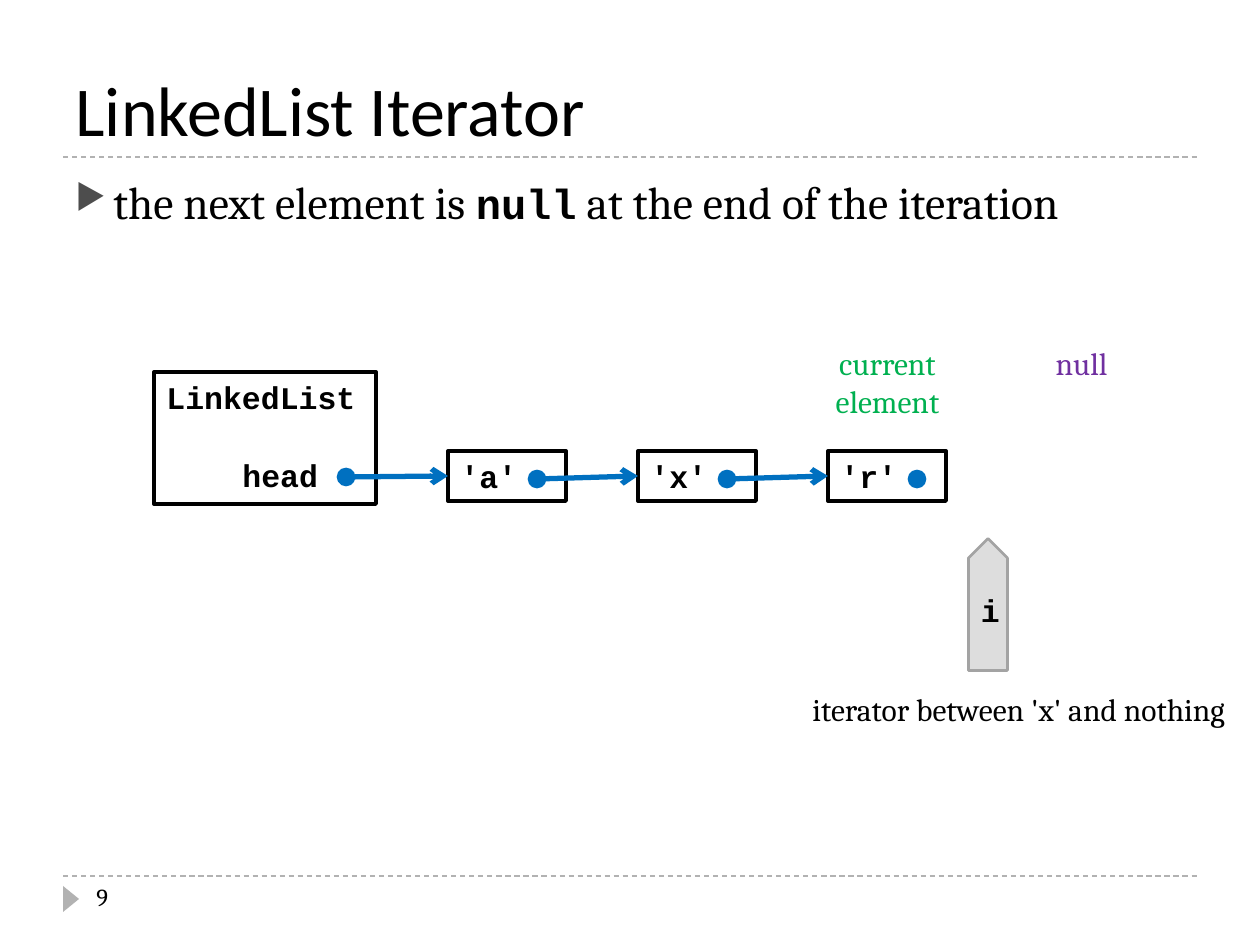
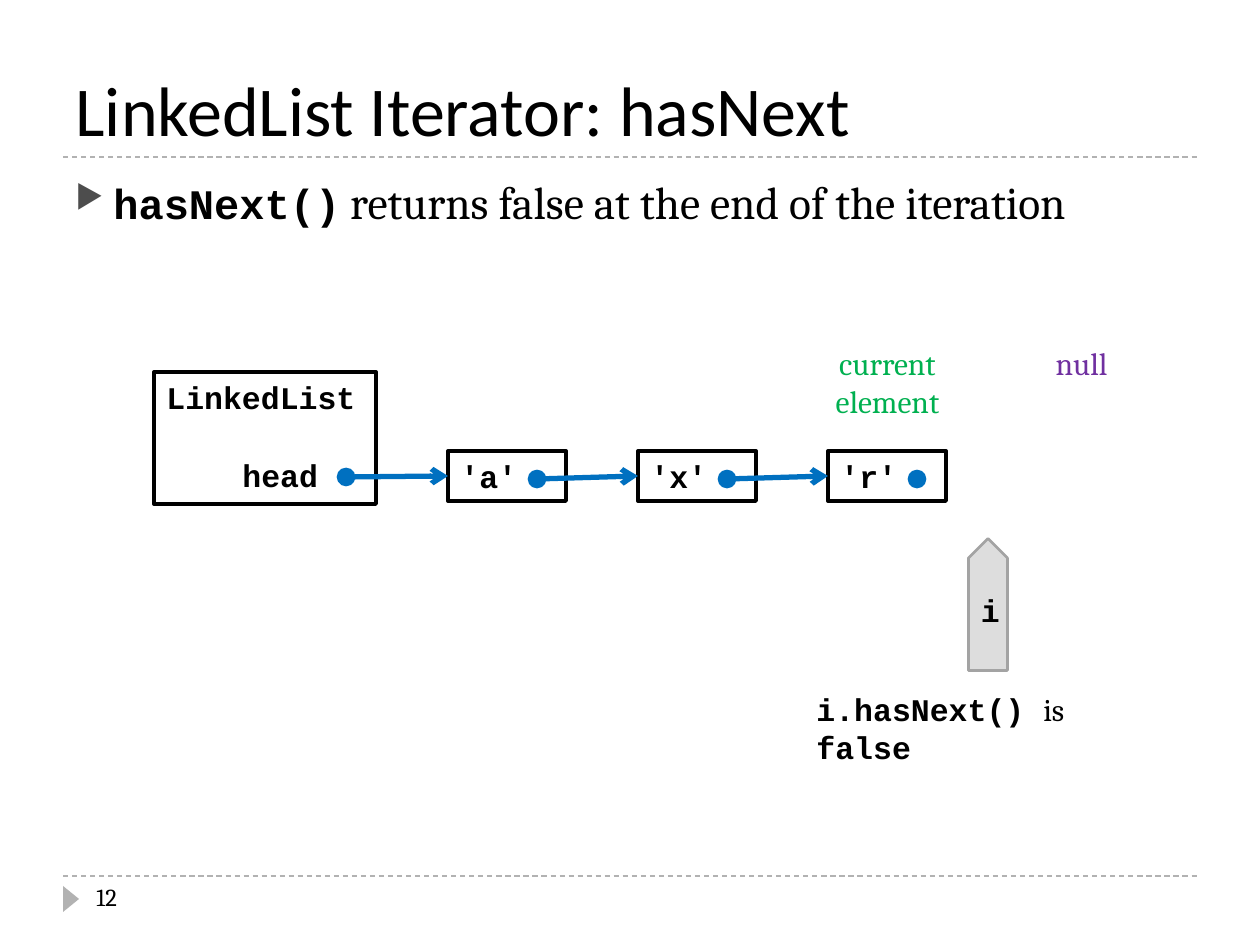
from lxml.etree import SubElement
from pptx import Presentation
from pptx.dml.color import RGBColor
from pptx.enum.dml import MSO_LINE
from pptx.enum.shapes import MSO_CONNECTOR, MSO_SHAPE
from pptx.enum.text import MSO_ANCHOR, MSO_AUTO_SIZE, PP_ALIGN
from pptx.oxml.ns import qn
from pptx.util import Emu, Pt

# Shared look
BLACK, BLUE, GREEN, PURPLE = "000000", "0070C0", "00B050", "7030A0"
RULE_GRAY, BULLET_GRAY, MARKER_FILL, MARKER_LINE = "B2B2B2", "4D4D4D", "DDDDDD", "A3A3A3"
CODE = {"font": "Courier New", "bold": True}

# Content: a line of text is a list of (words, format) spans
PAGES = [
    {
        "title": "LinkedList Iterator",
        "number": "9",
        "point": [
            ("the next element is ", {}),
            ("null", {**CODE, "size": 24}),
            (" at the end of the iteration", {}),
        ],
        "caption": [("iterator between 'x' and nothing", {})],
        "caption_box": (800, 684, 461, 50),
    },
    {
        "title": "LinkedList Iterator: hasNext",
        "number": "12",
        "point": [
            ("hasNext()", {**CODE, "size": 24}),
            (" returns false at the end of the iteration", {}),
        ],
        "caption": [("i.hasNext() ", CODE), ("is ", {}), ("false", CODE)],
        "caption_box": (804, 684, 370, 50),
    },
]
NODES = ["'a'", "'x'", "'r'"]
LABELS = [
    (["current", "element"], GREEN, (819, 338, 137, 89)),
    (["null"], PURPLE, (1042, 338, 79, 50)),
]

# Places, in px
PX_PER_INCH = 126
PAGE_SIZE = (1260, 945)
MARGIN, CONTENT_WIDTH = 63, 1134
RULE_TOPS = (157, 876)
LIST_BOX = (154, 372, 222, 132)
HEAD_DOT = (338, 469)
NODE_LEFT, NODE_TOP, NODE_STEP = 448, 451, 190
NODE_WIDTH, NODE_HEIGHT = 118, 50
DOT_SIZE, DOT_SHIFT_X, DOT_SHIFT_Y = 16, 81, 20


def px(length):
    return Emu(round(length * 914400 / PX_PER_INCH))


def color(hex_text):
    return RGBColor.from_string(hex_text)


def write(shape, lines, size=18, font="Cambria", ink=BLACK, bold=False,
          align=PP_ALIGN.LEFT, anchor=MSO_ANCHOR.TOP, wrap=True, grow=False):
    """Fill a shape with lines, each a string or a list of spans."""
    frame = shape.text_frame
    frame.word_wrap = wrap
    frame.auto_size = MSO_AUTO_SIZE.SHAPE_TO_FIT_TEXT if grow else MSO_AUTO_SIZE.NONE
    frame.vertical_anchor = anchor
    for index, line in enumerate(lines):
        para = frame.add_paragraph() if index else frame.paragraphs[0]
        para.alignment = align
        for words, changes in [(line, {})] if isinstance(line, str) else line:
            span = para.add_run()
            span.text = words
            span.font.size = Pt(changes.get("size", size))
            span.font.name = changes.get("font", font)
            span.font.bold = changes.get("bold", bold)
            span.font.color.rgb = color(ink)
    return frame.paragraphs


def add_text(page, box, lines, **text_format):
    return write(page.shapes.add_textbox(*map(px, box)), lines, **text_format)


def add_figure(page, kind, box, fill=None, line=None, width=1.5):
    shape = page.shapes.add_shape(kind, *map(px, box))
    shape.shadow.inherit = False
    if fill:
        shape.fill.solid()
        shape.fill.fore_color.rgb = color(fill)
    else:
        shape.fill.background()
    if line:
        shape.line.color.rgb = color(line)
        shape.line.width = Pt(width)
    else:
        shape.line.fill.background()
    return shape


def add_line(page, start, end, ink, width):
    line = page.shapes.add_connector(MSO_CONNECTOR.STRAIGHT, *map(px, (*start, *end)))
    line.line.color.rgb = color(ink)
    line.line.width = Pt(width)
    SubElement(line._element.spPr, qn("a:effectLst"))
    return line


def add_bullet(para):
    para.space_before = Pt(6)
    settings = para._p.get_or_add_pPr()
    settings.set("marL", str(px(38)))
    settings.set("indent", str(-px(38)))
    ink = SubElement(settings, qn("a:buClr"))
    SubElement(ink, qn("a:srgbClr"), val=BULLET_GRAY)
    SubElement(settings, qn("a:buSzPct"), val="76000")
    SubElement(settings, qn("a:buChar"), char="▶")


def add_frame(page, title, number):
    """Title, dashed rules and page number."""
    for top in RULE_TOPS:
        rule = add_line(page, (MARGIN, top), (MARGIN + CONTENT_WIDTH, top), RULE_GRAY, 0.75)
        rule.line.dash_style = MSO_LINE.DASH
    marker = add_figure(page, MSO_SHAPE.ISOSCELES_TRIANGLE, (58, 891, 26, 16), RULE_GRAY)
    marker.rotation = 90
    heading = page.shapes.title
    heading.left, heading.top, heading.width, heading.height = map(
        px, (MARGIN, 21, CONTENT_WIDTH, 136))
    write(heading, [title], size=40, font="Calibri", anchor=MSO_ANCHOR.BOTTOM)
    add_text(page, (84, 876, 273, 50), [number], size=14)


def add_dot(page, left, top):
    """Draw a reference dot and return its centre."""
    add_figure(page, MSO_SHAPE.OVAL, (left, top, DOT_SIZE, DOT_SIZE), BLUE, BLUE)
    return left + DOT_SIZE / 2, top + DOT_SIZE / 2


def add_linked_list(page):
    # List object
    list_box = add_figure(page, MSO_SHAPE.RECTANGLE, LIST_BOX, line=BLACK, width=2.25)
    head = write(list_box, ["LinkedList", "head"], **CODE)[1]
    head.space_before = Pt(23)
    head._p.get_or_add_pPr().set("marL", str(px(76)))
    reference = add_dot(page, *HEAD_DOT)

    # Nodes, each reached by an arrow from the dot before it
    for index, value in enumerate(NODES):
        left = NODE_LEFT + index * NODE_STEP
        node = add_figure(page, MSO_SHAPE.RECTANGLE,
                          (left, NODE_TOP, NODE_WIDTH, NODE_HEIGHT), line=BLACK, width=2.25)
        write(node, [value], grow=True, **CODE)
        arrow = add_line(page, reference, (left, NODE_TOP + NODE_HEIGHT / 2), BLUE, 3)
        arrow.end_connect(node, 1)
        SubElement(arrow.line._get_or_add_ln(), qn("a:tailEnd"), type="arrow")
        reference = add_dot(page, left + DOT_SHIFT_X, NODE_TOP + DOT_SHIFT_Y)


def add_iterator(page, caption, caption_box):
    marker = add_figure(page, MSO_SHAPE.PENTAGON, (922, 585, 132, 39), MARKER_FILL, MARKER_LINE)
    marker.rotation = 270
    write(marker, ["i"], align=PP_ALIGN.CENTER, anchor=MSO_ANCHOR.MIDDLE, **CODE)
    marker.text_frame._txBody.bodyPr.set("vert", "vert")
    add_text(page, caption_box, [caption], wrap=False, grow=True)
    for lines, ink, box in LABELS:
        add_text(page, box, lines, ink=ink, align=PP_ALIGN.CENTER, wrap=False, grow=True)


def main():
    deck = Presentation()
    deck.slide_width, deck.slide_height = map(px, PAGE_SIZE)
    for content in PAGES:
        page = deck.slides.add_slide(deck.slide_layouts[5])
        add_frame(page, content["title"], content["number"])
        point = add_text(page, (MARGIN, 168, CONTENT_WIDTH, 680), [content["point"]], size=26)
        add_bullet(point[0])
        add_linked_list(page)
        add_iterator(page, content["caption"], content["caption_box"])
    deck.save("out.pptx")


if __name__ == "__main__":
    main()
